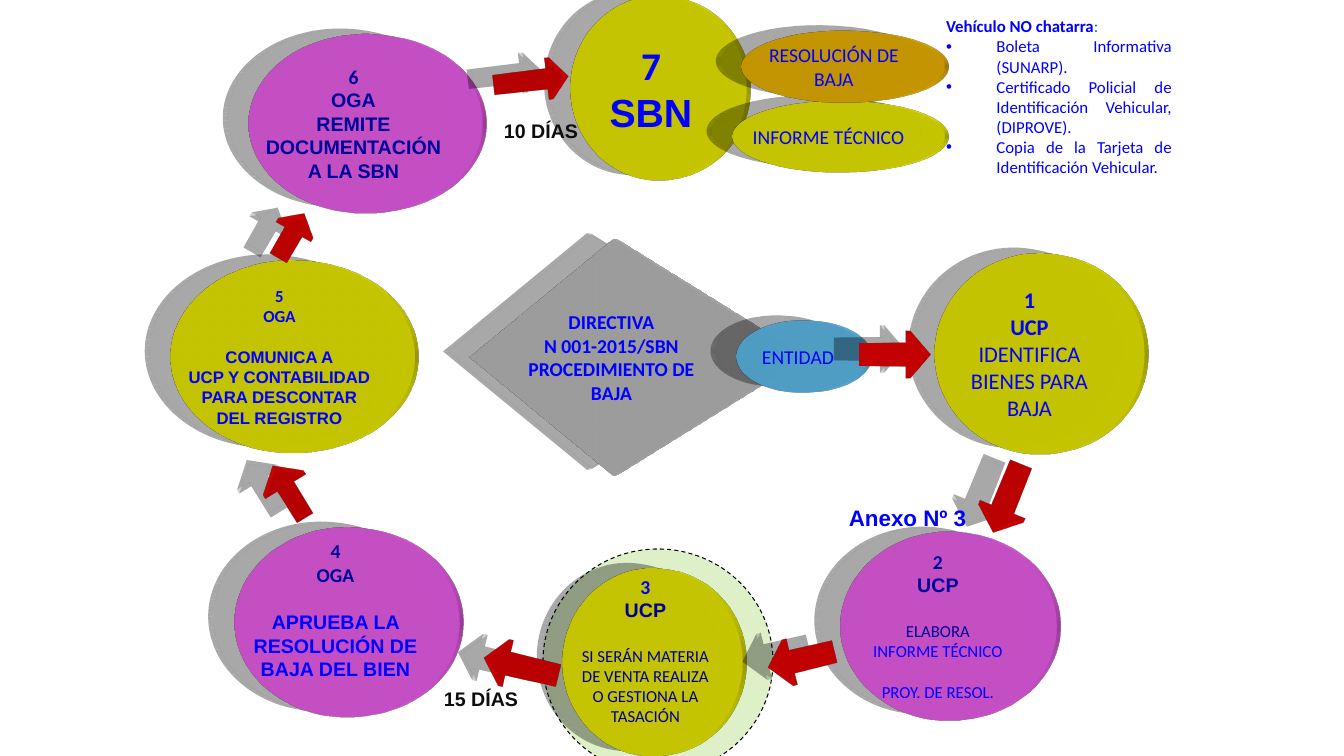
from lxml import etree
from pptx import Presentation
from pptx.dml.color import RGBColor
from pptx.enum.dml import MSO_LINE
from pptx.enum.shapes import MSO_SHAPE
from pptx.enum.text import MSO_ANCHOR, MSO_AUTO_SIZE, PP_ALIGN
from pptx.oxml import parse_xml
from pptx.oxml.ns import qn
from pptx.util import Pt

ELLIPSE, DIAMOND, ARROW = MSO_SHAPE.OVAL, MSO_SHAPE.DIAMOND, MSO_SHAPE.RIGHT_ARROW
LEFT, CENTER, JUSTIFY = PP_ALIGN.LEFT, PP_ALIGN.CENTER, PP_ALIGN.JUSTIFY
PX = 914400 / 100.8
COLORS = {
    "yellow": "FFFF00", "pink": "FF66FF", "gray": "C9C9C9", "sky": "66CCFF",
    "amber": "FFC000", "red": "FF0000", "green": "92D050", "black": "000000",
    "blue": "0000FF", "navy": "000099", "ink": "0D0D0D", "teal": "0070C0",
}
CAL, ARI = "Calibri", "Arial"
GAP_14, GAP_12 = 17, 15  # points left free above a new group of lines

# Node: shape, box in px, fill, free px below the text, lines
# Line: text, size, font, color, bold, points before
NODES = [
    (DIAMOND, (413, 240, 397, 234), "gray", 0, [
        ("DIRECTIVA", 14, CAL, "blue", True, 0),
        ("N 001-2015/SBN PROCEDIMIENTO DE BAJA", 14, CAL, "blue", True, 0)]),
    (ELLIPSE, (903, 254, 253, 199), "yellow", 0, [
        ("1", 16, CAL, "blue", True, 0),
        ("UCP", 16, CAL, "blue", True, 0),
        ("IDENTIFICA BIENES PARA BAJA", 16, CAL, "blue", False, 0)]),
    (ELLIPSE, (545, -3, 212, 183), "yellow", 0, [
        ("7", 28, CAL, "blue", True, 0),
        ("SBN", 28, ARI, "blue", True, 0)]),
    (ELLIPSE, (133, 261, 293, 191), "yellow", 0, [
        ("5", 12, CAL, "blue", True, 0),
        ("OGA", 12, CAL, "blue", True, 0),
        ("COMUNICA A", 12, ARI, "blue", True, GAP_12),
        ("UCP Y CONTABILIDAD", 12, ARI, "blue", True, 0),
        ("PARA DESCONTAR DEL REGISTRO", 12, ARI, "blue", True, 0)]),
    (ELLIPSE, (537, 569, 217, 187), "yellow", 24, [
        ("3", 14, CAL, "blue", True, 0),
        ("UCP", 14, ARI, "navy", True, 0),
        ("SI SERÁN MATERIA DE VENTA REALIZA O GESTIONA LA TASACIÓN",
         12, CAL, "navy", False, GAP_14)]),
    (ELLIPSE, (213, 35, 281, 177), "pink", 0, [
        ("6", 14, CAL, "navy", True, 0),
        ("OGA", 14, ARI, "navy", True, 0),
        ("REMITE DOCUMENTACIÓN", 14, ARI, "navy", True, 0),
        ("A LA SBN", 14, ARI, "navy", True, 0)]),
    (ELLIPSE, (200, 528, 271, 188), "pink", 24, [
        ("4", 14, CAL, "navy", True, 0),
        ("OGA", 14, CAL, "navy", True, 0),
        ("APRUEBA LA RESOLUCIÓN DE BAJA DEL BIEN", 14, ARI, "blue", True, GAP_14)]),
    (ELLIPSE, (808, 533, 260, 186), "pink", 0, [
        ("2", 14, CAL, "navy", True, 0),
        ("UCP", 14, ARI, "navy", True, 0),
        ("ELABORA", 12, CAL, "navy", False, GAP_14),
        ("INFORME TÉCNICO", 12, CAL, "blue", False, 0),
        ("PROY. DE RESOL.", 12, CAL, "blue", False, GAP_12)]),
    (ELLIPSE, (719, 321, 158, 71), "sky", 0, [
        ("ENTIDAD", 14, CAL, "blue", False, 0)]),
]
ARROWS = [  # box in px, rotation, shaft share
    ((261, 218, 57, 40), 300, 0.5),
    ((766, 635, 77, 47), 166.4, 0.5),
    ((481, 644, 87, 47), 193.5, 0.5),
    ((256, 471, 69, 47), 238.5, 0.41),
    ((485, 61, 85, 40), 353.3, 0.5),
    ((852, 331, 80, 47), 0, 0.5),
    ((966, 471, 84, 48), 112.1, 0.5),
]
DOCUMENTS = [
    (ELLIPSE, (701, 101, 255, 71), "yellow", 0, [
        ("INFORME TÉCNICO", 14, CAL, "blue", False, 0)]),
    (ELLIPSE, (712, 31, 244, 71), "amber", 0, [
        ("RESOLUCIÓN DE BAJA", 14, CAL, "blue", False, 0)]),
]
LABELS = [  # box in px, wraps, alignment, line
    ((434, 682, 103, 34), True, LEFT, ("15 DÍAS", 14, ARI, "ink", True, 0)),
    ((494, 114, 103, 34), True, LEFT, ("10 DÍAS", 14, ARI, "ink", True, 0)),
    ((839, 499, 139, 37), False, JUSTIFY, ("Anexo Nº 3", 16, ARI, "blue", True, 0)),
]
DASHED_CIRCLE = (543, 549, 230, 225)
LIST_BOX = (936, 11, 246, 173)
LIST_HEADING = "Vehículo NO chatarra"
LIST_ITEMS = [
    "Boleta Informativa (SUNARP).",
    "Certificado Policial de Identificación Vehicular, (DIPROVE).",
    "Copia de la Tarjeta de Identificación Vehicular.",
]

NS = 'xmlns:a="http://schemas.openxmlformats.org/drawingml/2006/main"'
SHADOW = (f'<a:outerShdw {NS} blurRad="184150" dist="241300" dir="11520000" algn="ctr" '
          'rotWithShape="0"><a:srgbClr val="000000"><a:alpha val="18000"/></a:srgbClr>'
          '</a:outerShdw>')
SCENE = (f'<a:scene3d {NS}><a:camera prst="perspectiveHeroicExtremeLeftFacing" fov="4800000">'
         '<a:rot lat="0" lon="2070000" rev="0"/></a:camera>'
         '<a:lightRig rig="legacyFlat3" dir="r"/></a:scene3d>')
DEPTH = f'<a:sp3d {NS} extrusionH="76200"/>'


def emu(box):
    return [round(value * PX) for value in box]


def color(name):
    return RGBColor.from_string(COLORS[name])


def set_font(font, size, name, tint, bold):
    font.size, font.name, font.bold = Pt(size), name, bold
    font.color.rgb = color(tint)


def write_lines(frame, lines, align):
    for index, (text, size, name, tint, bold, before) in enumerate(lines):
        para = frame.paragraphs[0] if index == 0 else frame.add_paragraph()
        para.text, para.alignment = text, align
        if before:
            para.space_before = Pt(before)
        set_font(para.font, size, name, tint, bold)


def add_flat(kind, box, fill):
    shape = slide.shapes.add_shape(kind, *emu(box))
    shape.shadow.inherit = False
    shape.fill.solid()
    shape.fill.fore_color.rgb = color(fill)
    shape.line.fill.background()
    return shape


def add_plate(kind, box, fill):
    """Add a shape turned in perspective, with its shadow to the left."""
    shape = add_flat(kind, box, fill)
    properties = shape.element.spPr
    properties.find(qn("a:effectLst")).append(parse_xml(SHADOW))
    properties.append(parse_xml(SCENE))
    properties.append(parse_xml(DEPTH))
    return shape


def add_node(kind, box, fill, free_below, lines):
    frame = add_plate(kind, box, fill).text_frame
    frame.word_wrap = True
    frame.vertical_anchor = MSO_ANCHOR.MIDDLE
    frame.margin_bottom += round(free_below * PX)
    write_lines(frame, lines, CENTER)


def set_bullet(para, indent, char):
    properties = para._p.get_or_add_pPr()
    properties.set("marL", str(indent))
    properties.set("indent", str(-indent))
    if char:
        etree.SubElement(properties, qn("a:buChar")).set("char", char)
    else:
        etree.SubElement(properties, qn("a:buNone"))


deck = Presentation()
deck.slide_width, deck.slide_height = emu((1344, 756))
slide = deck.slides.add_slide(deck.slide_layouts[1])
title = slide.shapes.title.element
title.getparent().remove(title)

circle = add_flat(ELLIPSE, DASHED_CIRCLE, "green")
tint = circle.element.spPr.find(qn("a:solidFill"))[0]
etree.SubElement(tint, qn("a:alpha")).set("val", "31000")
circle.line.color.rgb = color("black")
circle.line.width = Pt(0.75)
circle.line.dash_style = MSO_LINE.DASH

for node in NODES:
    add_node(*node)
for box, rotation, shaft in ARROWS:
    arrow = add_plate(ARROW, box, "red")
    arrow.rotation = rotation
    arrow.adjustments[0] = shaft
for document in DOCUMENTS:
    add_node(*document)
for box, wraps, align, line in LABELS:
    label = slide.shapes.add_textbox(*emu(box)).text_frame
    label.word_wrap = wraps
    write_lines(label, [line], align)

requirements = slide.placeholders[1]
slide.shapes._spTree.append(requirements.element)
requirements.left, requirements.top, requirements.width, requirements.height = emu(LIST_BOX)
frame = requirements.text_frame
frame.word_wrap = True
frame.auto_size = MSO_AUTO_SIZE.NONE
frame.vertical_anchor = MSO_ANCHOR.TOP
for index, text in enumerate([LIST_HEADING] + LIST_ITEMS):
    para = frame.paragraphs[0] if index == 0 else frame.add_paragraph()
    para.alignment, para.space_before = JUSTIFY, Pt(0)
    set_bullet(para, 457200 if index else 0, "•" if index else None)
    span = para.add_run()
    span.text = text
    set_font(span.font if index == 0 else para.font, 12, CAL, "blue", index == 0)
colon = frame.paragraphs[0].add_run()
colon.text = ":"
set_font(colon.font, 12, CAL, "teal", False)

deck.save("out.pptx")
